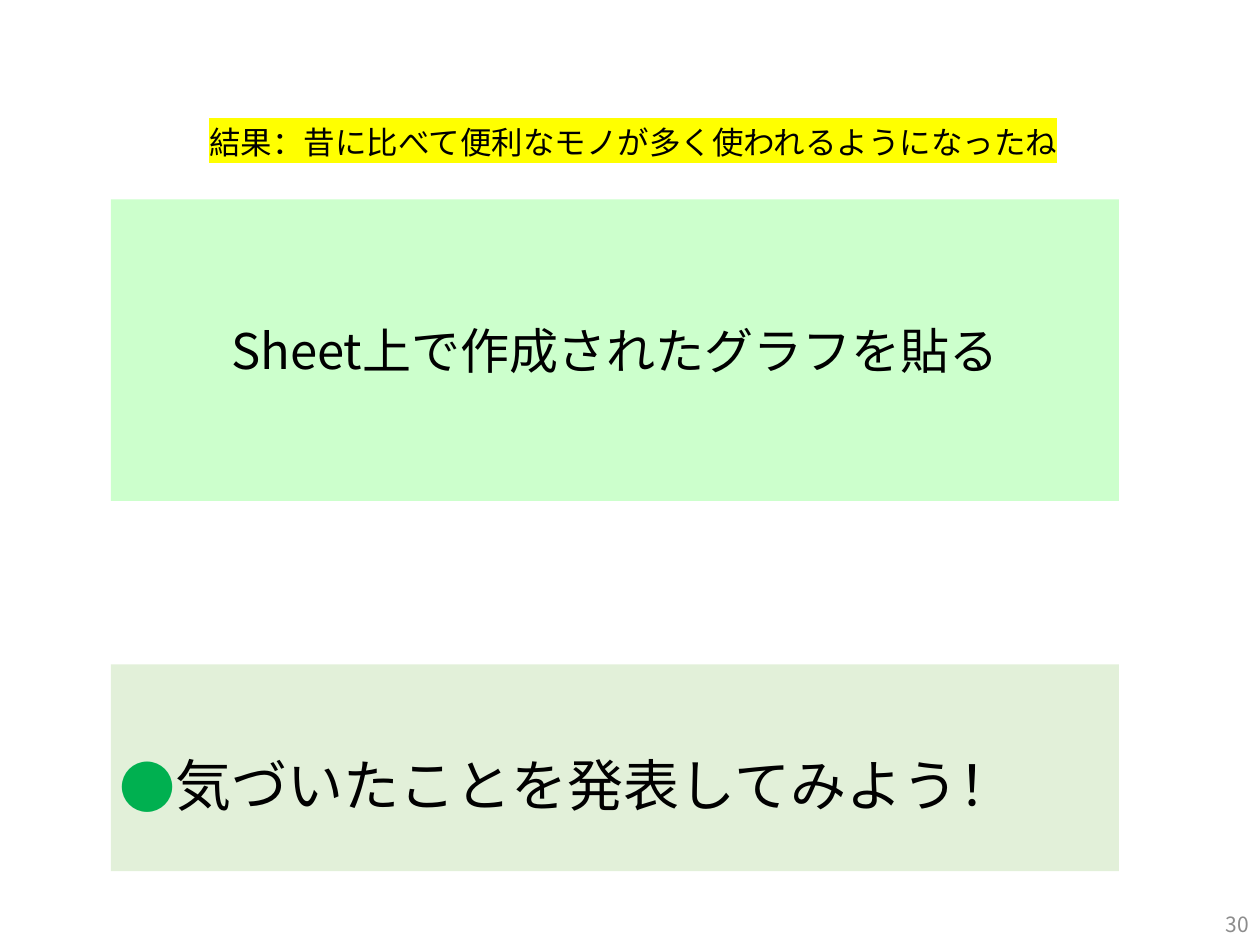
import dataclasses

import pptx
import pptx.dml.color
import pptx.enum.shapes
import pptx.enum.text
import pptx.oxml
import pptx.oxml.ns
import pptx.util

ALIGN = pptx.enum.text.PP_ALIGN
ANCHOR = pptx.enum.text.MSO_ANCHOR
Pt = pptx.util.Pt
Inches = pptx.util.Inches
rgb = pptx.dml.color.RGBColor.from_string


@dataclasses.dataclass(frozen=True)
class Theme:
    font: str = "Noto Sans CJK JP"
    ink: str = "000000"
    gray: str = "8C8C8C"
    mark: str = "FFFF00"
    mint: str = "CCFFCC"
    sage: str = "E2F0D9"
    dot: str = "00B050"
    small: int = 12
    head: int = 18
    body: int = 28
    large: int = 32


def add_tag(parent, tag, **attrs):
    node = pptx.oxml.parse_xml(f"<a:{tag} {pptx.oxml.ns.nsdecls('a')}/>")
    for key, value in attrs.items():
        node.set(key, value)
    parent.append(node)
    return node


def write(shape, text, theme, size, color=None, align=ALIGN.LEFT,
          anchor=ANCHOR.MIDDLE, inset=(0.1, 0.05), line=None, before=0,
          mark=None, dot=None, hang=0.38):
    """Fill a shape with one formatted paragraph."""
    frame = shape.text_frame
    frame.word_wrap = True
    frame.auto_size = pptx.enum.text.MSO_AUTO_SIZE.NONE
    frame.vertical_anchor = anchor
    frame.margin_left = frame.margin_right = Inches(inset[0])
    frame.margin_top = frame.margin_bottom = Inches(inset[1])
    para = frame.paragraphs[0]
    para.alignment = align
    para.space_before = Pt(before)
    if line:
        para.line_spacing = line
    run = para.add_run()
    run.text = text
    run.font.size = Pt(size)
    run.font.color.rgb = rgb(color or theme.ink)
    props = run.font._element
    if mark:
        add_tag(add_tag(props, "highlight"), "srgbClr", val=mark)
    run.font.name = theme.font
    add_tag(props, "ea", typeface=theme.font)
    if dot:
        style = para._p.get_or_add_pPr()
        style.set("marL", str(Inches(hang)))
        style.set("indent", str(-Inches(hang)))
        add_tag(add_tag(style, "buClr"), "srgbClr", val=dot)
        add_tag(style, "buFont", typeface=theme.font)
        add_tag(style, "buChar", char="●")


class Deck:
    """Places elements by shares of the slide's width and height."""

    def __init__(self, theme):
        self.theme = theme
        self.file = pptx.Presentation()
        self.file.slide_width = Inches(10)
        self.file.slide_height = Inches(7.5)
        self.slide = self.file.slides.add_slide(self.file.slide_layouts[5])

    def box(self, left, top, width, height):
        wide, high = self.file.slide_width, self.file.slide_height
        return [int(part) for part in
                (left * wide, top * high, width * wide, height * high)]

    def title(self, place, text, **style):
        shape = self.slide.shapes.title
        (shape.left, shape.top,
         shape.width, shape.height) = self.box(*place)
        write(shape, text, self.theme, **style)

    def label(self, place, text, **style):
        shape = self.slide.shapes.add_textbox(*self.box(*place))
        write(shape, text, self.theme, **style)

    def panel(self, place, fill, text, **style):
        kind = pptx.enum.shapes.MSO_SHAPE.RECTANGLE
        shape = self.slide.shapes.add_shape(kind, *self.box(*place))
        shape.shadow.inherit = False
        shape.fill.solid()
        shape.fill.fore_color.rgb = rgb(fill)
        shape.line.fill.background()
        write(shape, text, self.theme, **style)


def main():
    theme = Theme()
    deck = Deck(theme)
    left, width = 0.09, 0.8
    left = 0.088
    deck.title((0.113, 0.128, 0.736, 0.103),
               "結果：昔に比べて便利なモノが多く使われるようになったね",
               size=theme.head, align=ALIGN.RIGHT, anchor=ANCHOR.TOP,
               line=Pt(19), before=2, mark=theme.mark)
    deck.panel((left, 0.211, width, 0.319), theme.mint,
               "Sheet上で作成されたグラフを貼る",
               size=theme.body, align=ALIGN.CENTER)
    deck.panel((left, 0.703, width, 0.219), theme.sage,
               "気づいたことを発表してみよう！",
               size=theme.large, inset=(0.07, 0.04), line=1.5, before=6,
               dot=theme.dot)
    deck.label((0.776, 0.951, 0.225, 0.053), "30",
               size=theme.small, color=theme.gray, align=ALIGN.RIGHT)
    deck.file.save("out.pptx")


if __name__ == "__main__":
    main()
